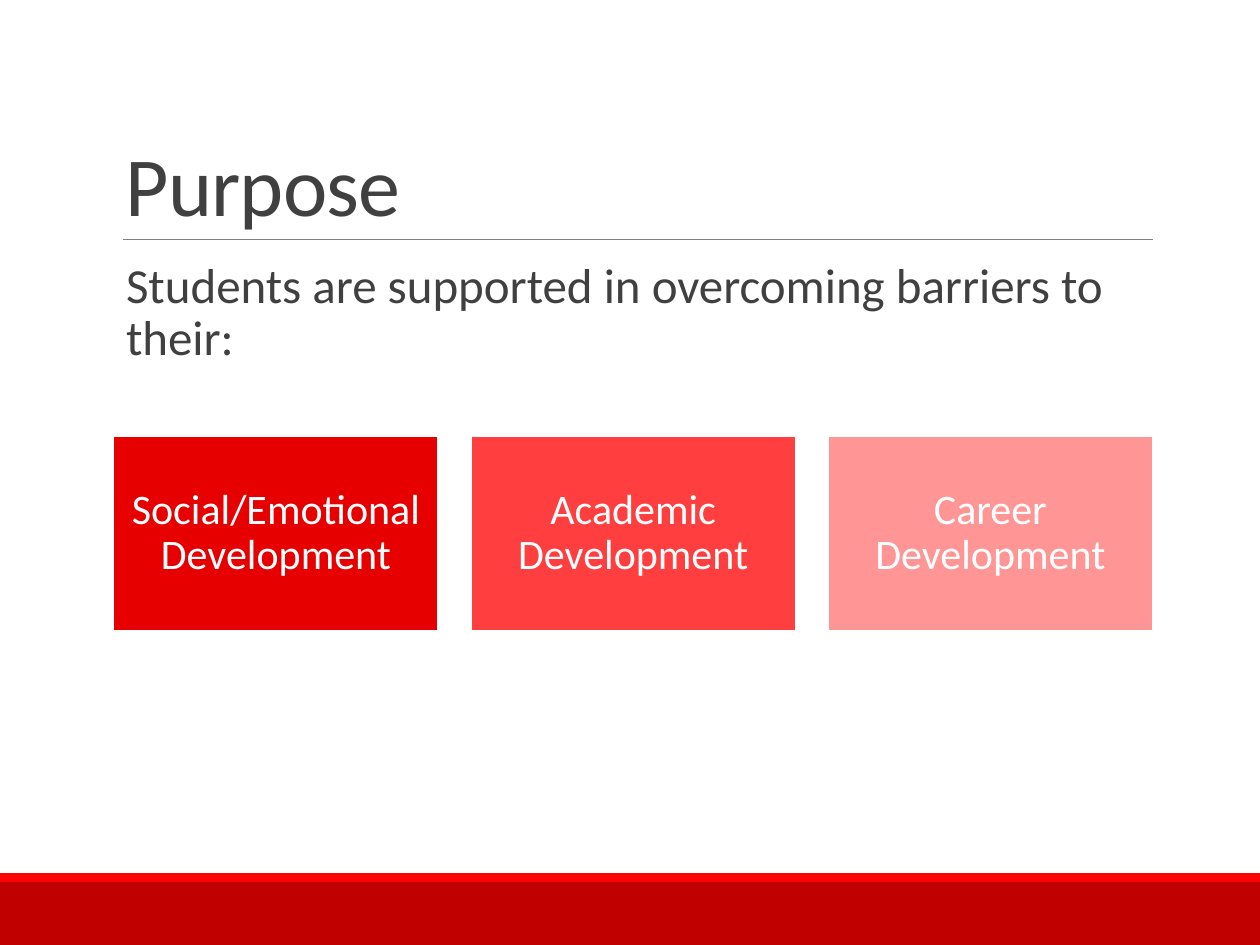
import pptx
import pptx.util
import pptx.dml.color
import pptx.enum.shapes
import pptx.enum.text
import pptx.oxml.ns
import lxml.etree

Inches = pptx.util.Inches
Pt = pptx.util.Pt
ALIGN = pptx.enum.text.PP_ALIGN
ANCHOR = pptx.enum.text.MSO_ANCHOR

COLORS = {
    "band": "C00000",
    "stripe": "FF0000",
    "rule": "808080",
    "text": "404040",
    "white": "FFFFFF",
}
FONT = "Calibri"
TITLE = "Purpose"
INTRO = "Students are supported in overcoming barriers to their:"
AREAS = [
    ("Social/Emotional Development", "E70000"),
    ("Academic Development", "FF3F3F"),
    ("Career Development", "FF9595"),
]

SLIDE_W, SLIDE_H = 10, 7.5
LEFT, CONTENT_W = 0.9, 8.25
AREA_TOP, AREA_W, AREA_H = 3.46, 2.58, 1.55
AREA_STEP = (CONTENT_W - AREA_W) / (len(AREAS) - 1)


def rgb(value):
    return pptx.dml.color.RGBColor.from_string(value)


def add_rect(slide, left, top, width, height, fill, outline=None):
    rect = slide.shapes.add_shape(
        pptx.enum.shapes.MSO_SHAPE.RECTANGLE,
        Inches(left), Inches(top), Inches(width), Inches(height))
    rect.shadow.inherit = False
    rect.fill.solid()
    rect.fill.fore_color.rgb = rgb(fill)
    if outline:
        rect.line.color.rgb = rgb(outline)
        rect.line.width = Pt(1.25)
    else:
        rect.line.fill.background()
    return rect


def write(shape, text, size, color, align, anchor, spacing, inset_x, inset_y):
    frame = shape.text_frame
    frame.word_wrap = True
    frame.vertical_anchor = anchor
    frame.margin_left = frame.margin_right = Inches(inset_x)
    frame.margin_top = frame.margin_bottom = Inches(inset_y)
    frame.text = text
    paragraph = frame.paragraphs[0]
    paragraph.alignment = align
    paragraph.line_spacing = spacing
    font = paragraph.runs[0].font
    font.name = FONT
    font.size = Pt(size)
    font.color.rgb = rgb(color)
    return paragraph


def add_text(slide, top, height, *style):
    box = slide.shapes.add_textbox(
        Inches(LEFT), Inches(top), Inches(CONTENT_W), Inches(height))
    return write(box, *style)


def main():
    deck = pptx.Presentation()
    deck.slide_width, deck.slide_height = Inches(SLIDE_W), Inches(SLIDE_H)
    slide = deck.slides.add_slide(deck.slide_layouts[6])

    add_rect(slide, 0, 7, SLIDE_W, 0.5, COLORS["band"])
    add_rect(slide, 0, 6.93, SLIDE_W, 0.07, COLORS["stripe"])

    rule = slide.shapes.add_connector(
        pptx.enum.shapes.MSO_CONNECTOR.STRAIGHT,
        Inches(0.98), Inches(1.9), Inches(9.15), Inches(1.9))
    rule.line.color.rgb = rgb(COLORS["rule"])
    rule.line.width = Pt(0.5)
    lxml.etree.SubElement(
        rule._element.spPr, pptx.oxml.ns.qn("a:effectLst"))

    title = add_text(slide, 0.31, 1.59, TITLE, 48, COLORS["text"],
                     ALIGN.LEFT, ANCHOR.BOTTOM, 0.85, 0.1, 0.05)
    title.runs[0].font._element.set("spc", "-50")

    intro = add_text(slide, 2.02, 1.06, INTRO, 28, COLORS["text"],
                     ALIGN.LEFT, ANCHOR.TOP, 0.9, 0, 0.05)
    intro.space_before, intro.space_after = Pt(12), Pt(2)
    intro._p.get_or_add_pPr().set("marL", str(Inches(0.1)))

    for index, (area, fill) in enumerate(AREAS):
        card = add_rect(slide, LEFT + index * AREA_STEP, AREA_TOP,
                        AREA_W, AREA_H, fill, COLORS["white"])
        write(card, area, 24, COLORS["white"],
              ALIGN.CENTER, ANCHOR.MIDDLE, 0.9, 0.1, 0.1)

    deck.save("out.pptx")


if __name__ == "__main__":
    main()
